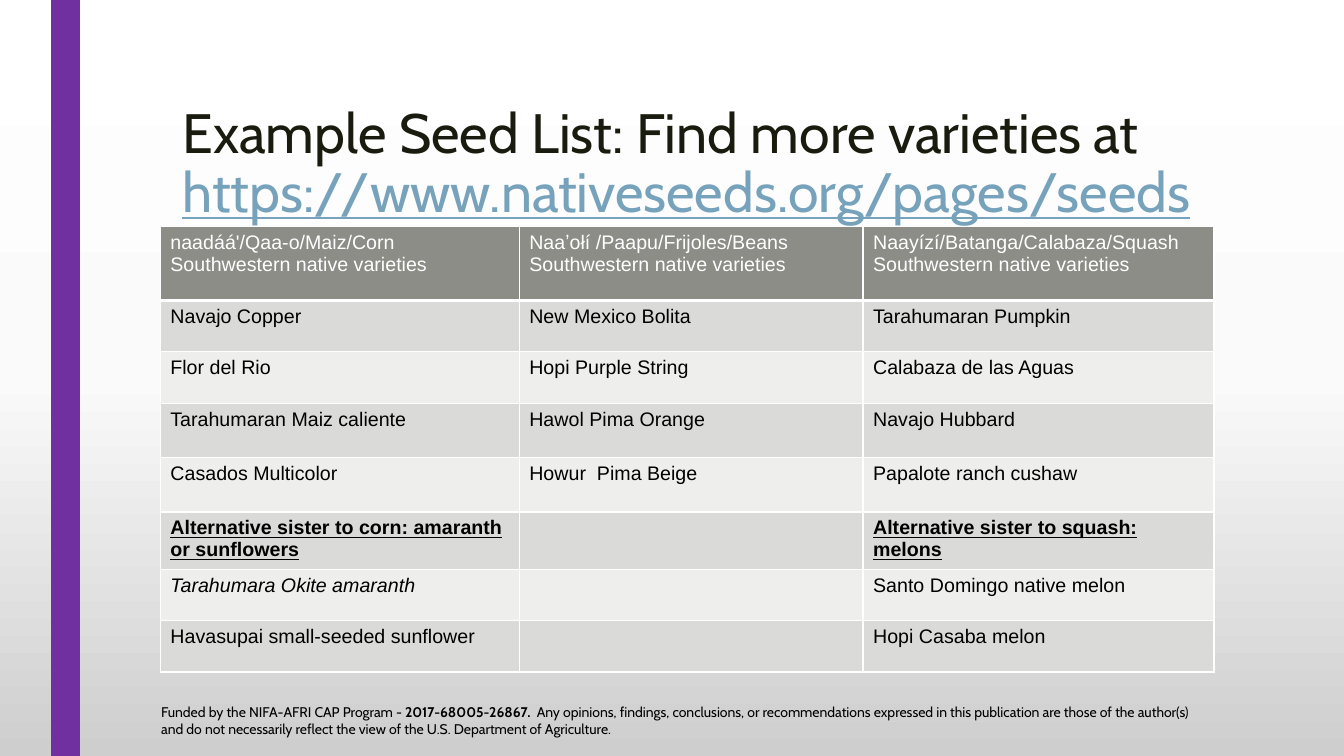
import copy

import pptx
import pptx.dml.color
import pptx.enum.shapes
import pptx.enum.text
import pptx.oxml
import pptx.oxml.ns
import pptx.util
from pptx.util import Inches

HEADS = ["naadáá'/Qaa-o/Maiz/Corn", "Naaʼołí /Paapu/Frijoles/Beans",
         "Naayízí/Batanga/Calabaza/Squash"]
SEEDS = [
    ["Navajo Copper", "New Mexico Bolita", "Tarahumaran Pumpkin"],
    ["Flor del Rio", "Hopi Purple String", "Calabaza de las Aguas"],
    ["Tarahumaran Maiz caliente", "Hawol Pima Orange", "Navajo Hubbard"],
    ["Casados Multicolor", "Howur\u00a0 Pima Beige", "Papalote ranch cushaw"],
    ["Alternative sister to corn: amaranth or sunflowers", "",
     "Alternative sister to squash: melons"],
    ["Tarahumara Okite amaranth", "", "Santo Domingo native melon"],
    ["Havasupai small-seeded sunflower", "", "Hopi Casaba melon"],
]
WIDTHS = [3.56, 3.41, 3.48]
HEIGHTS = [0.73, 0.51, 0.51, 0.54, 0.54, 0.54, 0.51, 0.51]


def color(code):
    return pptx.dml.color.RGBColor.from_string(code)


def write(para, text, size=14, font="Arial", ink="000000",
          bold=False, italic=False, under=False):
    run = para.add_run()
    run.text = text
    face = run.font
    face.size, face.name = pptx.util.Pt(size), font
    face.bold, face.italic, face.underline = bold, italic, under
    face.color.rgb = color(ink)


def edge(cell, side, width):
    line = pptx.oxml.parse_xml(
        f'<a:{side} {pptx.oxml.ns.nsdecls("a")} w="{int(pptx.util.Pt(width))}">'
        f'<a:solidFill><a:srgbClr val="FFFFFF"/></a:solidFill></a:{side}>')
    # Borders come before the fill in the cell properties
    props = cell._tc.get_or_add_tcPr()
    props.insert(len(props) - 1, line)


class Deck:
    font = "Cabin"

    def __init__(self):
        self.show = pptx.Presentation()
        self.show.slide_width = Inches(13.33)
        self.show.slide_height = Inches(7.5)
        self.slide = self.show.slides.add_slide(self.show.slide_layouts[5])

    def backdrop(self, *codes):
        fill = self.slide.background.fill
        fill.gradient()
        fill.gradient_angle = 270
        stops = self.slide.element.find(".//" + pptx.oxml.ns.qn("a:gsLst"))
        stops.insert(1, copy.deepcopy(stops[0]))
        for n, (stop, code) in enumerate(zip(fill.gradient_stops, codes)):
            stop.position = n / 2
            stop.color.rgb = color(code)

    def bar(self, left, top, width, height, code):
        kind = pptx.enum.shapes.MSO_SHAPE.RECTANGLE
        shape = self.slide.shapes.add_shape(
            kind, Inches(left), Inches(top), Inches(width), Inches(height))
        shape.shadow.inherit = False
        shape.fill.solid()
        shape.fill.fore_color.rgb = color(code)
        shape.line.color.rgb = color(code)
        shape.line.width = pptx.util.Pt(2.75)

    def title(self, left, top, width, height, lead, link):
        shape = self.slide.shapes.title
        shape.left, shape.top = Inches(left), Inches(top)
        shape.width, shape.height = Inches(width), Inches(height)
        frame = shape.text_frame
        frame.auto_size = pptx.enum.text.MSO_AUTO_SIZE.NONE
        frame.vertical_anchor = pptx.enum.text.MSO_ANCHOR.TOP
        para = frame.paragraphs[0]
        para.alignment = pptx.enum.text.PP_ALIGN.LEFT
        para.line_spacing = 0.89
        write(para, lead, 39.6, self.font, "191B0E")
        write(para, link, 39.6, self.font, "77A2BB", under=True)

    def note(self, left, top, width, height, parts):
        box = self.slide.shapes.add_textbox(
            Inches(left), Inches(top), Inches(width), Inches(height))
        box.text_frame.word_wrap = True
        for text, bold in parts:
            write(box.text_frame.paragraphs[0], text, 10, self.font, bold=bold)

    def table(self, left, top):
        grid = self.slide.shapes.add_table(
            len(HEIGHTS), len(WIDTHS), Inches(left), Inches(top),
            Inches(sum(WIDTHS)), Inches(sum(HEIGHTS))).table
        for col, width in zip(grid.columns, WIDTHS):
            col.width = Inches(width)
        for row, height in zip(grid.rows, HEIGHTS):
            row.height = Inches(height)
        for r, names in enumerate([HEADS] + SEEDS):
            for c, name in enumerate(names):
                self.cell(grid.cell(r, c), r, c, name)

    def cell(self, cell, row, col, name):
        cell.fill.solid()
        shade = "8C8D86" if row == 0 else ("EEEEED", "DADBD9")[row % 2]
        cell.fill.fore_color.rgb = color(shade)
        for side in ("lnL", "lnR", "lnT", "lnB"):
            heavy = (row, side) in ((0, "lnB"), (1, "lnT"))
            edge(cell, side, 3 if heavy else 1)
        frame = cell.text_frame
        if row == 0:
            write(frame.paragraphs[0], name, ink="FFFFFF")
            write(frame.add_paragraph(), "Southwestern native varieties",
                  ink="FFFFFF")
        elif name:
            alt = name.startswith("Alternative")
            write(frame.paragraphs[0], name, bold=alt, under=alt,
                  italic=(row, col) == (6, 0))


def main():
    deck = Deck()

    # Background and side bar
    deck.backdrop("FFFFFF", "FAFAFA", "CECECE")
    deck.bar(0.52, 0, 0.25, 7.5, "7030A0")

    # Funding note
    deck.note(1.5, 6.93, 10.5, 0.44, [
        ("Funded by the NIFA-AFRI CAP Program - ", False),
        ("2017-68005-26867.\u00a0 ", True),
        ("Any opinions, findings, conclusions, or recommendations expressed "
         "in this publication are those of the author(s) and do not "
         "necessarily reflect the view of the U.S. Department of "
         "Agriculture.", False)])

    # Title and seed table
    deck.title(1.71, 1, 10.5, 1.62,
               "Example Seed List: Find more varieties at ",
               "https://www.nativeseeds.org/pages/seeds")
    deck.table(1.59, 2.25)
    deck.show.save("out.pptx")


if __name__ == "__main__":
    main()
